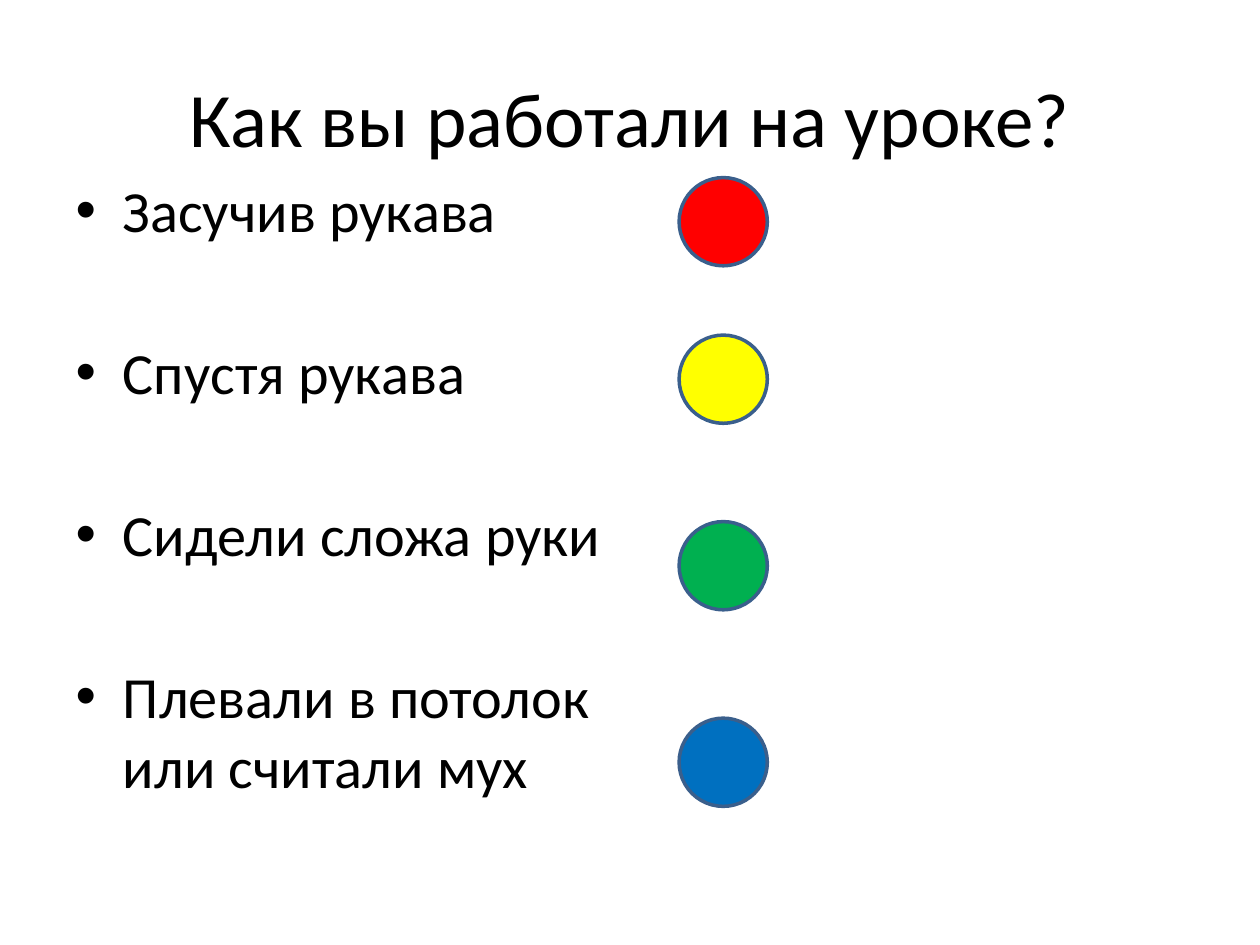
from pptx import Presentation
from pptx.dml.color import RGBColor
from pptx.enum.shapes import MSO_SHAPE
from pptx.enum.text import MSO_ANCHOR, MSO_AUTO_SIZE, PP_ALIGN
from pptx.util import Inches, Pt

BLACK = RGBColor(0x00, 0x00, 0x00)
RED = RGBColor(0xFF, 0x00, 0x00)
YELLOW = RGBColor(0xFF, 0xFF, 0x00)
GREEN = RGBColor(0x00, 0xB0, 0x50)
BLUE = RGBColor(0x00, 0x70, 0xC0)
OUTLINE = RGBColor(0x3A, 0x5F, 0x8C)

# answer, colour of its circle, top of the circle
ANSWERS = [
    ("Засучив рукава", RED, 1.41),
    ("Спустя рукава", YELLOW, 2.66),
    ("Сидели сложа руки", GREEN, 4.14),
    ("Плевали в потолок или считали мух", BLUE, 5.7),
]


def write(p, text, size, font="Calibri", color=BLACK, align=PP_ALIGN.LEFT, before=0):
    p.alignment = align
    p.space_before = Pt(before)
    r = p.add_run()
    r.text = text
    r.font.name = font
    r.font.size = Pt(size)
    r.font.color.rgb = color


class SlideBuilder:
    title_size = 44
    body_size = 33.3
    item_gap = 52.7
    circle_size = 0.7

    def __init__(self, prs):
        self.slide = prs.slides.add_slide(prs.slide_layouts[1])

    def place(self, sp, left, top, width, height):
        """Move a placeholder and return its text frame with fixed text size."""
        sp.left, sp.top = Inches(left), Inches(top)
        sp.width, sp.height = Inches(width), Inches(height)
        tf = sp.text_frame
        tf.auto_size = MSO_AUTO_SIZE.NONE
        tf.word_wrap = True
        return tf

    def title(self, text, *box):
        tf = self.place(self.slide.shapes.title, *box)
        tf.vertical_anchor = MSO_ANCHOR.MIDDLE
        write(tf.paragraphs[0], text, self.title_size, align=PP_ALIGN.CENTER)

    def bullets(self, items, *box):
        tf = self.place(self.slide.placeholders[1], *box)
        for i, item in enumerate(items):
            p = tf.add_paragraph() if i else tf.paragraphs[0]
            write(p, item, self.body_size, before=self.item_gap if i else 0)

    def circle(self, left, top, color):
        size = Inches(self.circle_size)
        sp = self.slide.shapes.add_shape(
            MSO_SHAPE.OVAL, Inches(left), Inches(top), size, size)
        sp.shadow.inherit = False
        sp.fill.solid()
        sp.fill.fore_color.rgb = color
        sp.line.color.rgb = OUTLINE
        sp.line.width = Pt(2)


def main():
    prs = Presentation()
    prs.slide_width, prs.slide_height = Inches(10), Inches(7.5)
    builder = SlideBuilder(prs)
    builder.title("Как вы работали на уроке?", 0.5, 0.3, 9, 1.25)
    builder.bullets([text for text, _, _ in ANSWERS], 0.5, 1.33, 4.42, 5.37)
    for _, color, top in ANSWERS:
        builder.circle(5.39, top, color)
    prs.save("out.pptx")


if __name__ == "__main__":
    main()
